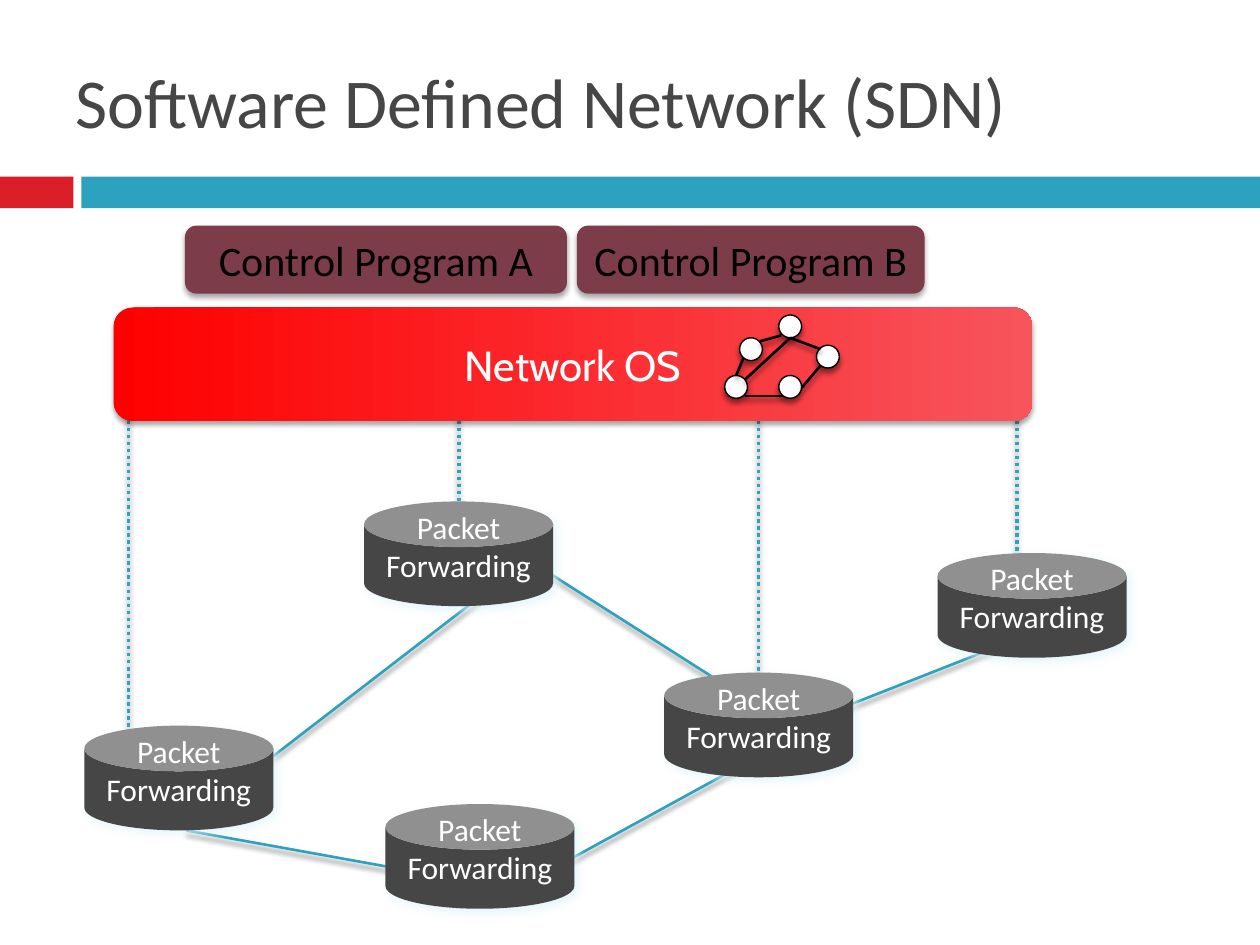
from pptx import Presentation
from pptx.dml.color import RGBColor
from pptx.enum.dml import MSO_LINE
from pptx.enum.shapes import MSO_CONNECTOR, MSO_SHAPE
from pptx.enum.text import MSO_ANCHOR, PP_ALIGN
from pptx.oxml import parse_xml
from pptx.oxml.ns import nsdecls
from pptx.util import Cm, Pt

COLORS = {
    "red": "DA1F28",
    "teal": "2DA2BF",
    "maroon": "7D3C4A",
    "dark": "464646",
    "glow": "DEF5FA",
    "white": "FFFFFF",
    "black": "000000",
    "gradient start": "FF0000",
    "gradient end": "F7545C",
}
SOFT_SHADOW = ("black", 35, 3, 2, 90)
LINE_SHADOW = ("black", 45, 3, 2.4, 90)
GLOW_SHADOW = ("glow", 75, 5, 3, 45)


def rgb(name):
    return RGBColor.from_string(COLORS[name])


def add_shadow(shape, color, opacity, blur, distance, angle):
    shape._element.spPr.append(parse_xml(
        f'<a:effectLst {nsdecls("a")}><a:outerShdw blurRad="{Pt(blur)}" '
        f'dist="{Pt(distance)}" dir="{angle * 60000}" rotWithShape="0">'
        f'<a:srgbClr val="{COLORS[color]}"><a:alpha val="{opacity * 1000}"/>'
        '</a:srgbClr></a:outerShdw></a:effectLst>'))


def add_text(shape, text, size=24, font="Calibri", color="black",
             align=PP_ALIGN.CENTER, anchor=MSO_ANCHOR.MIDDLE, wrap=True):
    frame = shape.text_frame
    frame.word_wrap = wrap
    frame.vertical_anchor = anchor
    for index, line in enumerate(text.split("\n")):
        para = frame.add_paragraph() if index else frame.paragraphs[0]
        para.alignment = align
        span = para.add_run()
        span.text = line
        span.font.size = Pt(size)
        span.font.name = font
        span.font.color.rgb = rgb(color)
    return frame


def add_box(shapes, kind, left, top, width, height, fill, shadow=None, outline=None):
    box = shapes.add_shape(kind, Cm(left), Cm(top), Cm(width), Cm(height))
    if isinstance(fill, tuple):
        box.fill.gradient()
        box.fill.gradient_angle = 0
        for stop, position, name in zip(box.fill.gradient_stops, (0, 1), fill):
            stop.position = position
            stop.color.rgb = rgb(name)
    else:
        box.fill.solid()
        box.fill.fore_color.rgb = rgb(fill)
    if outline:
        box.line.color.rgb = rgb(outline)
        box.line.width = Pt(0.79)
    else:
        box.line.fill.background()
    if shadow:
        add_shadow(box, *shadow)
    else:
        box.shadow.inherit = False
    return box


def add_link(shapes, start_x, start_y, end_x, end_y, color="teal", width=1.5, dash=None):
    link = shapes.add_connector(MSO_CONNECTOR.STRAIGHT, Cm(start_x), Cm(start_y),
                                Cm(end_x), Cm(end_y))
    link.line.color.rgb = rgb(color)
    link.line.width = Pt(width)
    if dash:
        link.line.dash_style = dash
    add_shadow(link, *LINE_SHADOW)


def add_header(shapes, left, top, width):
    gap_start, gap_end, band_top, band_height = 1.48, 1.64, top + 3.56, 0.64
    add_box(shapes, MSO_SHAPE.RECTANGLE, left, band_top, gap_start, band_height, "red")
    add_box(shapes, MSO_SHAPE.RECTANGLE, left + gap_end, band_top,
            width - gap_end, band_height, "teal")
    title = shapes.add_textbox(Cm(left + 1.27), Cm(top + 0.43), Cm(width - 2.54), Cm(3.18))
    add_text(title, "Software Defined Network (SDN)", size=40, color="dark",
             align=PP_ALIGN.LEFT)


def add_network(shapes, left, top):
    links = [
        (3.81, 7.9, 8.43, 4.34),
        (9.02, 3.99, 12.7, 6.33),
        (9.32, 10.24, 13.59, 7.9),
        (2.06, 9.4, 6.71, 10.24),
        (14.81, 7.11, 18.8, 5.54),
    ]
    for start_x, start_y, end_x, end_y in links:
        add_link(shapes, left + start_x, top + start_y, left + end_x, top + end_y)
    for x, length in [(0.89, 7.72), (7.55, 2.77), (13.59, 6.33), (18.8, 3.99)]:
        add_link(shapes, left + x, top, left + x, top + length, width=2,
                 dash=MSO_LINE.ROUND_DOT)
    for x, y in [(0, 7.29), (6.07, 8.87), (5.64, 2.77), (11.69, 6.22), (17.2, 3.81)]:
        switch = add_box(shapes, MSO_SHAPE.CAN, left + x, top + y, 3.81, 2.11,
                         "dark", GLOW_SHADOW)
        switch.adjustments[0] = 0.436
        frame = add_text(switch, "Packet\nForwarding", size=18, color="white",
                         anchor=MSO_ANCHOR.BOTTOM, wrap=False)
        frame.margin_top = frame.margin_bottom = Cm(0)


def add_topology(shapes, left, top):
    group = shapes.add_group_shape().shapes
    for x, y in [(0.3, 0.46), (1.09, 0), (1.09, 1.22), (1.85, 0.61), (0, 1.22)]:
        add_box(group, MSO_SHAPE.OVAL, left + x, top + y, 0.46, 0.46, "white",
                LINE_SHADOW, "black")
    edges = [
        (0.71, 0.53, 1.14, 0.41),
        (0.23, 1.22, 0.38, 0.86),
        (0.41, 1.3, 1.32, 0.46),
        (0.41, 1.63, 1.17, 1.63),
        (1.32, 0.46, 1.93, 0.69),
        (1.55, 1.47, 1.93, 1.02),
    ]
    for start_x, start_y, end_x, end_y in edges:
        add_link(group, left + start_x, top + start_y, left + end_x, top + end_y,
                 color="black")


def add_controller(shapes, left, top):
    for name, x, width in [("A", 1.44, 7.7), ("B", 9.34, 7.01)]:
        program = add_box(shapes, MSO_SHAPE.ROUNDED_RECTANGLE, left + x, top,
                          width, 1.37, "maroon", SOFT_SHADOW)
        add_text(program, f"Control Program {name}")
    system = add_box(shapes, MSO_SHAPE.ROUNDED_RECTANGLE, left, top + 1.65, 18.52, 2.29,
                     ("gradient start", "gradient end"), SOFT_SHADOW)
    add_text(system, "Network OS", font="Cabin", color="white")
    add_topology(shapes, left + 12.32, top + 1.8)


def main():
    deck = Presentation()
    deck.slide_width, deck.slide_height = Cm(25.4), Cm(19.05)
    page = deck.slides.add_slide(deck.slide_layouts[6])
    add_header(page.shapes, 0, 0, 25.4)
    add_network(page.shapes, 1.7, 7.34)
    add_controller(page.shapes, 2.29, 4.55)
    deck.save("out.pptx")


if __name__ == "__main__":
    main()
